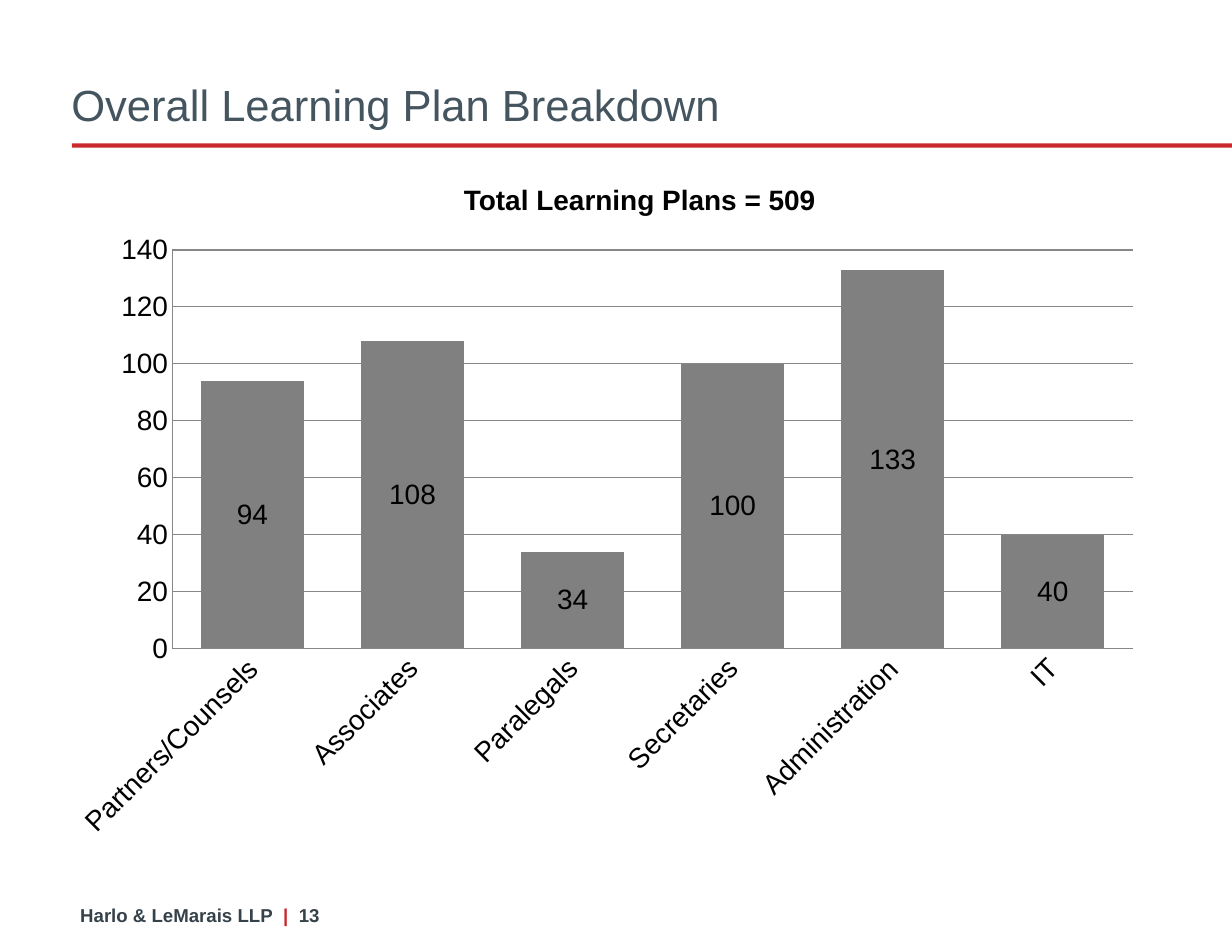
from lxml.etree import SubElement
from pptx import Presentation
from pptx.chart.data import CategoryChartData
from pptx.dml.color import RGBColor
from pptx.enum.chart import XL_CHART_TYPE, XL_LABEL_POSITION, XL_TICK_MARK
from pptx.enum.shapes import MSO_SHAPE
from pptx.enum.text import MSO_ANCHOR, PP_ALIGN
from pptx.oxml.ns import qn
from pptx.util import Cm, Pt

FONT = "Arial"
COLORS = {
    "title": "455560",
    "accent": "C9282D",
    "footer": "36424A",
    "text": "000000",
    "bar": "808080",
    "line": "878787",
}
PLANS = {
    "Partners/Counsels": 94,
    "Associates": 108,
    "Paralegals": 34,
    "Secretaries": 100,
    "Administration": 133,
    "IT": 40,
}
PLOT_AREA = {"x": 0.106, "y": 0.045, "w": 0.874, "h": 0.634}


def color(name):
    return RGBColor.from_string(COLORS[name])


def style_font(font, size, color_name, bold=False):
    font.name = FONT
    font.size = Pt(size)
    font.bold = bold
    font.color.rgb = color(color_name)


def add_title(page, text):
    title = page.shapes.title
    title.left, title.top, title.width, title.height = Cm(0.91), Cm(0.51), Cm(26.31), Cm(2.59)
    frame = title.text_frame
    frame.text = text
    frame.vertical_anchor = MSO_ANCHOR.BOTTOM
    frame.margin_left = Cm(0.71)
    frame.margin_top = frame.margin_bottom = Cm(0.15)
    para = frame.paragraphs[0]
    para.alignment = PP_ALIGN.LEFT
    style_font(para.runs[0].font, 28, "title")


def add_rule(page):
    rule = page.shapes.add_shape(MSO_SHAPE.RECTANGLE, Cm(1.63), Cm(3.25), Cm(26.31), Cm(0.1))
    rule.shadow.inherit = False
    rule.fill.solid()
    rule.fill.fore_color.rgb = color("accent")
    rule.line.fill.background()


def add_text(page, left, top, width, height, spans, size, alignment=PP_ALIGN.LEFT):
    """Add one bold line made of (text, colour name) spans."""
    box = page.shapes.add_textbox(Cm(left), Cm(top), Cm(width), Cm(height))
    frame = box.text_frame
    frame.word_wrap = True
    para = frame.paragraphs[0]
    para.alignment = alignment
    for text, color_name in spans:
        span = para.add_run()
        span.text = text
        style_font(span.font, size, color_name, bold=True)


def set_plot_area(chart):
    """Fix the inner plot area as fractions of the chart."""
    plot_area = chart._chartSpace.chart.plotArea
    layout = plot_area.find(qn("c:layout"))
    if layout is None:
        layout = SubElement(plot_area, qn("c:layout"))
        plot_area.insert(0, layout)
    manual = SubElement(layout, qn("c:manualLayout"))
    settings = {"layoutTarget": "inner", "xMode": "edge", "yMode": "edge", **PLOT_AREA}
    for tag, value in settings.items():
        SubElement(manual, qn(f"c:{tag}")).set("val", str(value))


def style_axis(axis):
    axis.major_tick_mark = axis.minor_tick_mark = XL_TICK_MARK.NONE
    axis.format.line.color.rgb = color("line")
    style_font(axis.tick_labels.font, 18, "text")


def add_plan_chart(page):
    data = CategoryChartData()
    data.categories = list(PLANS)
    data.add_series("Series 1", list(PLANS.values()))
    chart = page.shapes.add_chart(
        XL_CHART_TYPE.COLUMN_STACKED, Cm(1.27), Cm(5.03), Cm(24.92), Cm(14.25), data
    ).chart
    chart.has_legend = False
    chart.has_title = False
    style_font(chart.font, 18, "text")
    set_plot_area(chart)

    categories, values = chart.category_axis, chart.value_axis
    style_axis(categories)
    style_axis(values)
    categories.tick_labels._element.txPr.bodyPr.set("rot", str(-45 * 60000))
    values.minimum_scale, values.maximum_scale, values.major_unit = 0, 140, 20
    values.tick_labels.number_format = "#,##0"
    values.tick_labels.number_format_is_linked = False
    values.has_major_gridlines = True
    values.major_gridlines.format.line.color.rgb = color("line")

    plot = chart.plots[0]
    plot.vary_by_categories = False
    plot.gap_width, plot.overlap = 55, 100
    bars = plot.series[0]
    bars.format.fill.solid()
    bars.format.fill.fore_color.rgb = color("bar")
    labels = bars.data_labels
    labels.show_value = True
    labels.position = XL_LABEL_POSITION.CENTER
    style_font(labels.font, 18, "text")


def main():
    deck = Presentation()
    deck.slide_width, deck.slide_height = Cm(27.94), Cm(21.59)
    page = deck.slides.add_slide(deck.slide_layouts[5])
    footer = [("Harlo & LeMarais LLP  ", "footer"), ("|  ", "accent"), ("13", "footer")]
    add_text(page, 1.57, 20.37, 6.27, 0.79, footer, 12)
    add_rule(page)
    add_title(page, "Overall Learning Plan Breakdown")
    add_plan_chart(page)
    heading = [("Total Learning Plans = 509", "text")]
    add_text(page, 3.18, 4.01, 22.66, 1.02, heading, 18, PP_ALIGN.CENTER)
    deck.save("out.pptx")


if __name__ == "__main__":
    main()
